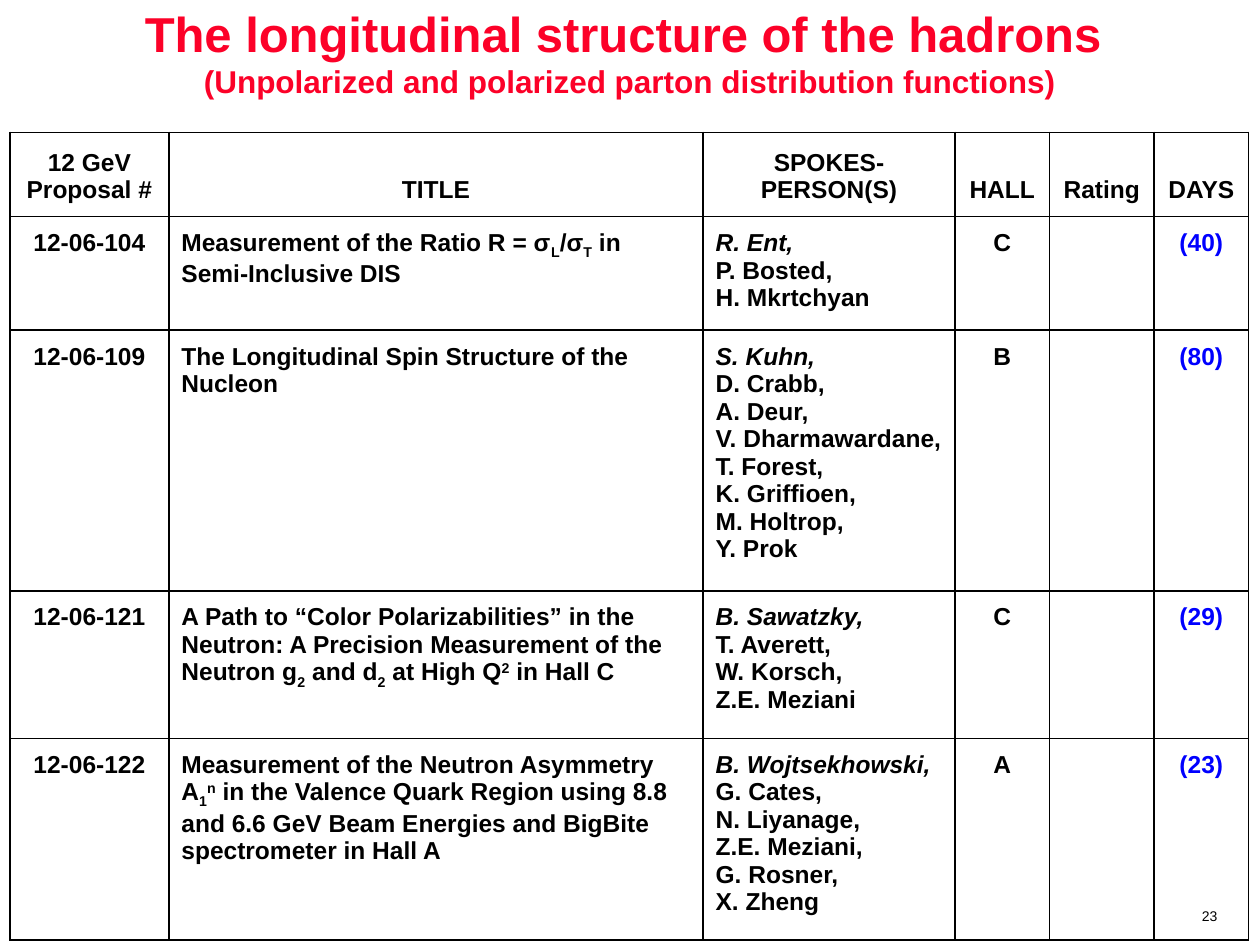
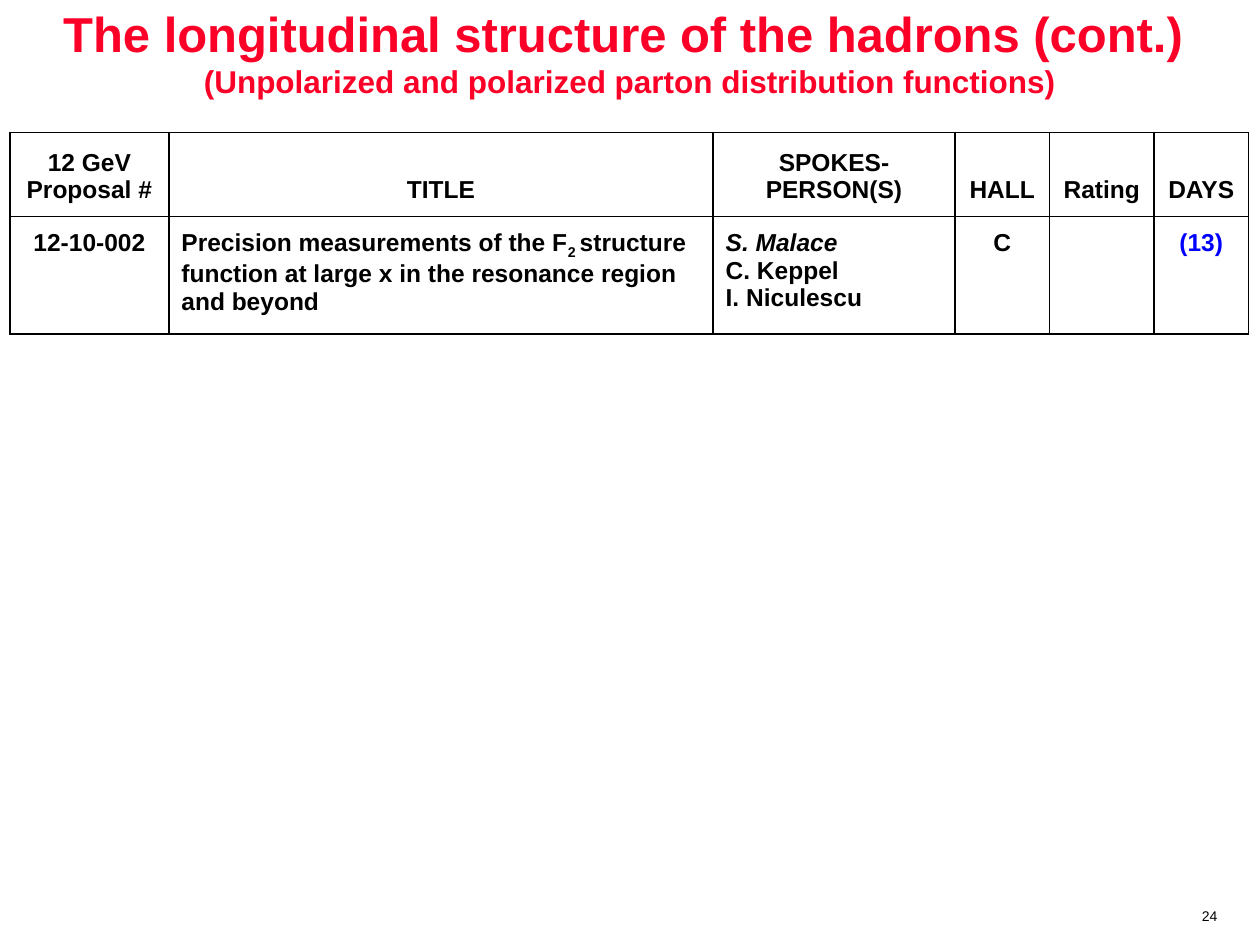
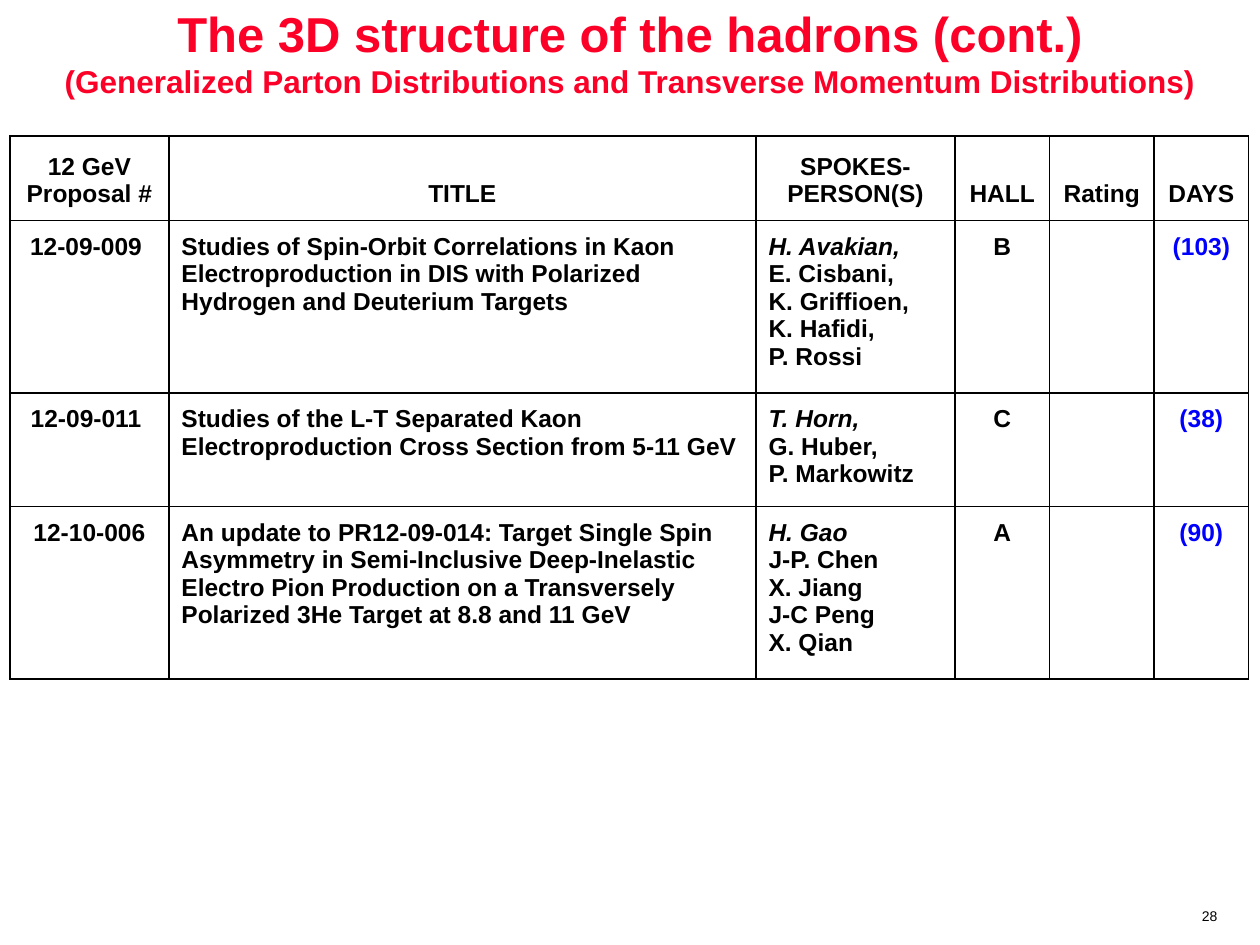
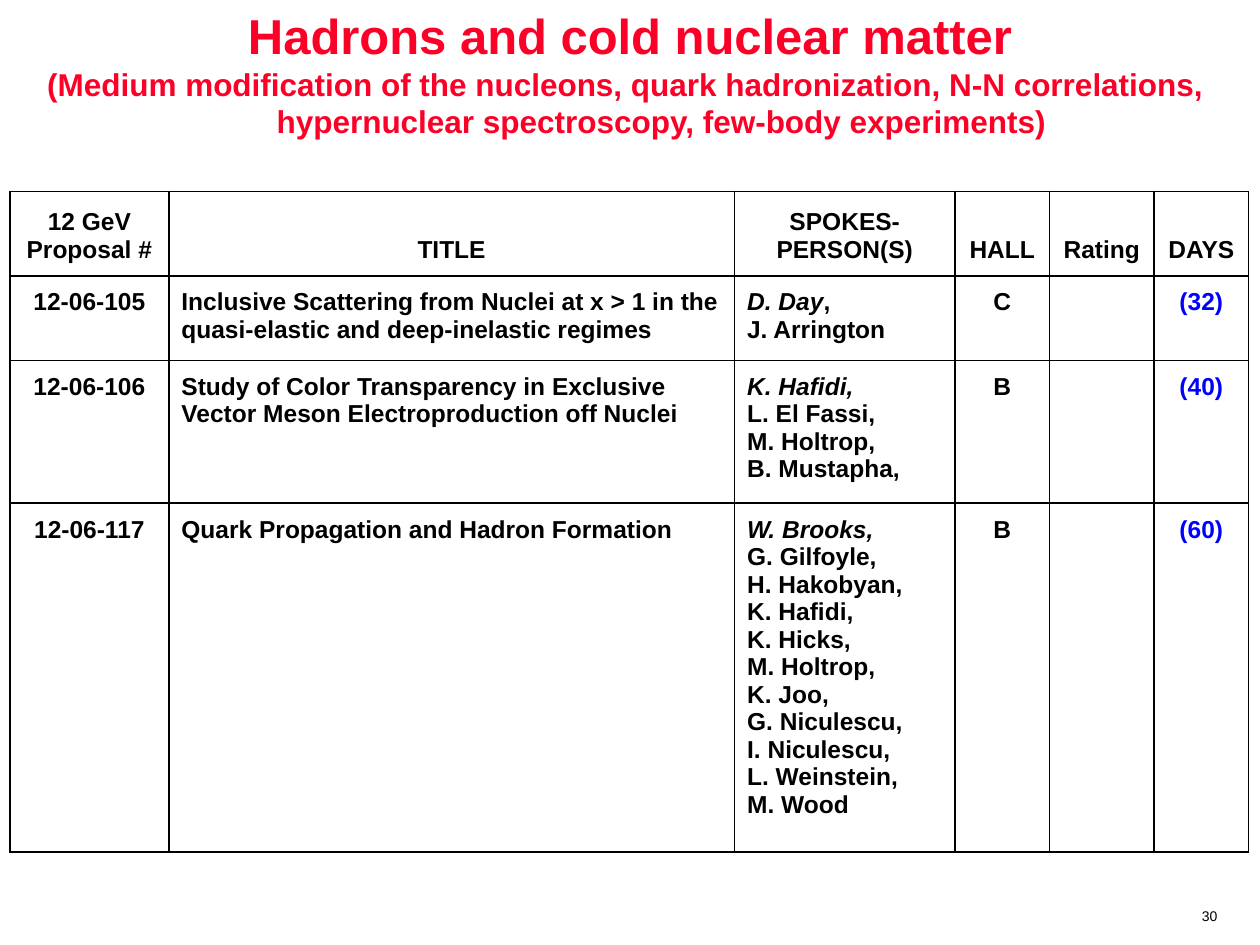
from lxml.etree import SubElement
from pptx import Presentation
from pptx.dml.color import RGBColor
from pptx.enum.text import MSO_ANCHOR, MSO_AUTO_SIZE, PP_ALIGN
from pptx.oxml.ns import qn
from pptx.util import Inches, Pt

FONT = "Arial"
COLORS = {"title": "FC0128", "text": "000000", "days": "0000FF", "border": "000000"}
BASELINES = {"_": "-25000", "^": "30000"}
SLIDE_W, SLIDE_H = Inches(10), Inches(7.5)
TITLE_H = Inches(0.82)

HEADINGS = ["12 GeV Proposal #", "TITLE", "SPOKES-PERSON(S)", "HALL", "Rating", "DAYS"]
TABLE_LEFT = 0.08
NUMBER_W, HALL_W, RATING_W, DAYS_W = 1.26, 0.75, 0.83, 0.75
TITLE_AND_SPOKES_W = 6.24
HEADER_H = 0.67
CELL_MARGIN = Inches(0.1)

PARTON_SUBTITLE = "(Unpolarized and polarized parton distribution functions)"

# Each proposal: number, title, spokespersons by paragraph, hall, days, row height.
# "|" separates runs; a run starting with * is italic, _ subscript, ^ superscript.
SLIDES = [
    {
        "page": 23, "title_top": 0, "table_top": 1.05, "title_col": 4.24,
        "title": "The longitudinal structure of the hadrons \n",
        "subtitle": PARTON_SUBTITLE,
        "proposals": [
            ("12-06-104",
             "Measurement of the Ratio R = σ|_L|/σ|_T| in Semi-Inclusive DIS",
             ["*R. Ent,", "P. Bosted,", "H. Mkrtchyan"], "C", "(40)", 0.9),
            ("12-06-109",
             "The Longitudinal Spin Structure of the Nucleon",
             ["*S. Kuhn,", "D. Crabb,", "A. Deur, \nV. Dharmawardane, T. Forest,",
              "K. Griffioen,", "M. Holtrop,", "Y. Prok"], "B", "(80)", 2.07),
            ("12-06-121",
             "A Path to “Color Polarizabilities” in the Neutron: A Precision "
             "Measurement of the Neutron g|_2| and d|_2| at High Q|^2| in Hall C",
             ["*B. Sawatzky,", "T. Averett,", "W. Korsch,", "Z.E. Meziani"],
             "C", "(29)", 1.17),
            ("12-06-122",
             "Measurement of the Neutron Asymmetry A|_1|^n| in the Valence Quark Region "
             "using 8.8 and 6.6 GeV Beam Energies and BigBite spectrometer in Hall A",
             ["*B. Wojtsekhowski, |G. Cates,", "N. Liyanage,", "Z.E. Meziani,",
              "G. Rosner,", "X. Zheng"], "A", "(23)", 1.6),
        ],
    },
    {
        "page": 24, "title_top": 0, "table_top": 1.05, "title_col": 4.32,
        "title": "The longitudinal structure of the hadrons (cont.) \n",
        "subtitle": PARTON_SUBTITLE,
        "proposals": [
            ("12-10-002",
             "Precision measurements of the F|_2 |structure function at large x in the "
             "resonance region and beyond",
             ["*S. Malace", "C. Keppel", "I. Niculescu"], "C", "(13)", 0.93),
        ],
    },
    {
        "page": 28, "title_top": 0, "table_top": 1.08, "title_col": 4.66,
        "title": "The 3D structure of the hadrons (cont.)\n",
        "subtitle": "(Generalized Parton Distributions and Transverse Momentum Distributions)",
        "proposals": [
            ("12-09-009 ",
             "Studies of Spin-Orbit Correlations in Kaon Electroproduction in DIS with "
             "Polarized Hydrogen and Deuterium Targets",
             ["*H. Avakian, \n|E. Cisbani, \nK. Griffioen, \nK. Hafidi, \nP. Rossi"],
             "B", "(103)", 1.37),
            ("12-09-011 ",
             "Studies of the L-T Separated Kaon Electroproduction Cross Section from 5-11 GeV",
             ["*T. Horn, \n|G. Huber, \nP. Markowitz"], "C", "(38)", 0.9),
            ("12-10-006",
             "An update to PR12-09-014: Target Single Spin Asymmetry in Semi-Inclusive "
             "Deep-Inelastic Electro Pion Production on a Transversely Polarized 3He "
             "Target at 8.8 and 11 GeV",
             ["*H. Gao", "J-P. Chen", "X. Jiang", "J-C Peng", "X. Qian"],
             "A", "(90)", 1.37),
        ],
    },
    {
        "page": 30, "title_top": 0.17, "table_top": 1.52, "title_col": 4.49,
        "title": "Hadrons and cold nuclear matter\n",
        "subtitle": "(Medium modification of the nucleons, quark hadronization, "
                    "N-N correlations, \n\thypernuclear spectroscopy, few-body experiments)",
        "proposals": [
            ("12-06-105",
             "Inclusive Scattering from Nuclei at x > 1 in the quasi-elastic and "
             "deep-inelastic regimes",
             ["*D. Day|, \nJ. Arrington"], "C", "(32)", 0.67),
            ("12-06-106",
             "Study of Color Transparency in Exclusive Vector Meson Electroproduction "
             "off Nuclei",
             ["*K. Hafidi, \n|L. El Fassi, \nM. Holtrop,", "B. Mustapha,"],
             "B", "(40)", 1.13),
            ("12-06-117",
             "Quark Propagation and Hadron Formation",
             ["*W. Brooks, \n|G. Gilfoyle,", "H. Hakobyan,", "K. Hafidi,", "K. Hicks,",
              "M. Holtrop, \nK. Joo, \nG. Niculescu, \nI. Niculescu, \nL. Weinstein, \nM. Wood"],
             "B", "(60)", 2.77),
        ],
    },
]


def add_runs(paragraph, marked, size, color, bold=True):
    """Add the runs of a marked text, with a line break at each newline."""
    for part in marked.split("|"):
        mark = part[0] if part[0] in "*_^" else ""
        for i, line in enumerate(part[len(mark):].split("\n")):
            if i:
                paragraph.add_line_break()
            if not line:
                continue
            run = paragraph.add_run()
            run.text = line
            run.font.name = FONT
            run.font.size = Pt(size)
            run.font.bold = bold
            run.font.italic = mark == "*"
            run.font.color.rgb = RGBColor.from_string(COLORS[color])
            if mark in BASELINES:
                run._r.get_or_add_rPr().set("baseline", BASELINES[mark])


def fill_cell(cell, paragraphs, color, align, anchor):
    cell.margin_left = cell.margin_right = CELL_MARGIN
    cell.margin_top = cell.margin_bottom = CELL_MARGIN
    cell.vertical_anchor = anchor
    properties = cell._tc.get_or_add_tcPr()
    for side in ("a:lnL", "a:lnR", "a:lnT", "a:lnB"):
        border = SubElement(properties, qn(side), w=str(Pt(1)))
        border_fill = SubElement(border, qn("a:solidFill"))
        SubElement(border_fill, qn("a:srgbClr"), val=COLORS["border"])
    cell.fill.background()
    for i, marked in enumerate(paragraphs):
        paragraph = cell.text_frame.add_paragraph() if i else cell.text_frame.paragraphs[0]
        paragraph.alignment = align
        add_runs(paragraph, marked, 14, color)


prs = Presentation()
prs.slide_width, prs.slide_height = SLIDE_W, SLIDE_H
title_only = prs.slide_layouts[5]

for content in SLIDES:
    slide = prs.slides.add_slide(title_only)

    title = slide.shapes.title
    title.left, title.top = 0, Inches(content["title_top"])
    title.width, title.height = SLIDE_W, TITLE_H
    title.text_frame.auto_size = MSO_AUTO_SIZE.NONE
    title.text_frame.vertical_anchor = MSO_ANCHOR.MIDDLE
    heading = title.text_frame.paragraphs[0]
    heading.alignment = PP_ALIGN.CENTER
    add_runs(heading, content["title"], 28, "title")
    add_runs(heading, content["subtitle"], 18, "title")

    page_number = slide.shapes.add_textbox(
        Inches(9.43), Inches(7.18), Inches(0.34), Inches(0.21))
    page_number.text_frame.word_wrap = False
    page_line = page_number.text_frame.paragraphs[0]
    page_line.alignment = PP_ALIGN.CENTER
    page_line.line_spacing = 0.8
    page_line.space_before = Pt(1.6)
    add_runs(page_line, str(content["page"]), 8, "text", bold=False)

    title_w = content["title_col"]
    widths = [NUMBER_W, title_w, TITLE_AND_SPOKES_W - title_w, HALL_W, RATING_W, DAYS_W]
    heights = [HEADER_H] + [proposal[-1] for proposal in content["proposals"]]
    proposals = slide.shapes.add_table(
        len(heights), len(widths), Inches(TABLE_LEFT), Inches(content["table_top"]),
        Inches(sum(widths)), Inches(sum(heights))).table
    proposals.first_row = proposals.horz_banding = False
    for column, width in zip(proposals.columns, widths):
        column.width = Inches(width)
    for row, height in zip(proposals.rows, heights):
        row.height = Inches(height)

    for c, label in enumerate(HEADINGS):
        fill_cell(proposals.cell(0, c), [label], "text", PP_ALIGN.CENTER, MSO_ANCHOR.BOTTOM)
    for r, (number, topic, spokes, hall, days, _) in enumerate(content["proposals"], 1):
        for c, paragraphs in enumerate([[number], [topic], spokes, [hall], [], [days]]):
            fill_cell(proposals.cell(r, c), paragraphs,
                      "days" if HEADINGS[c] == "DAYS" else "text",
                      PP_ALIGN.LEFT if c in (1, 2) else PP_ALIGN.CENTER, MSO_ANCHOR.TOP)

prs.save("out.pptx")
